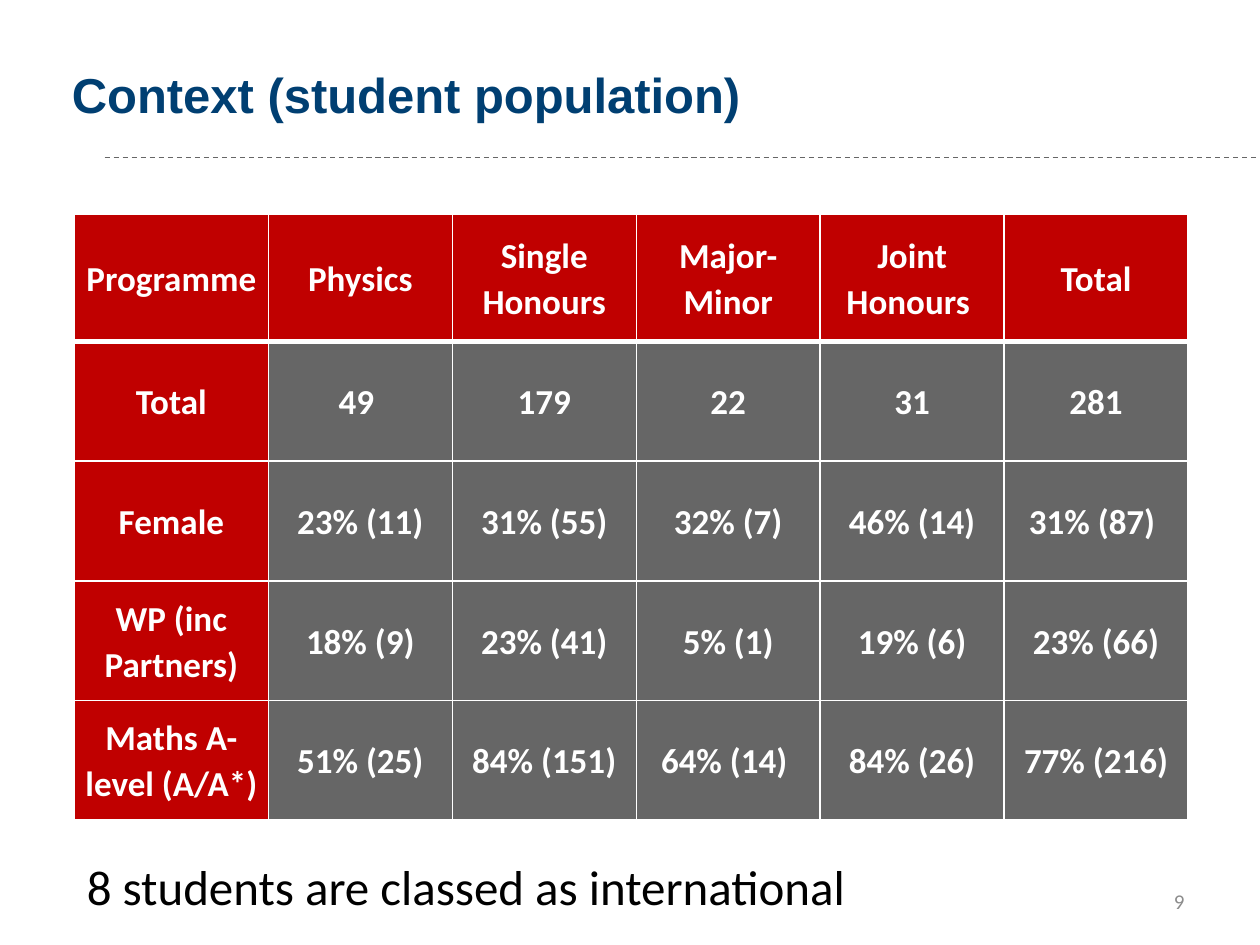
from lxml import etree
from pptx import Presentation, util as u
from pptx.dml.color import RGBColor
from pptx.enum import dml, shapes, text
from pptx.oxml.ns import qn

NAVY = RGBColor(0x00, 0x3F, 0x72)
RED = RGBColor(0xC0, 0x00, 0x00)
GREY = RGBColor(0x66, 0x66, 0x66)
PALE = RGBColor(0x8C, 0x8C, 0x8C)
WHITE = RGBColor(0xFF, 0xFF, 0xFF)
BLACK = RGBColor(0x00, 0x00, 0x00)

WIDTH, HEIGHT = u.Inches(10), u.Inches(7.5)
COLUMNS = [1.54] + [1.46] * 5
ROWS = [1.01] + [0.95] * 4
POPULATION = [
    ["Programme", "Physics", "Single Honours", "Major-Minor", "Joint Honours ", "Total"],
    ["Total", "49 ", "179", "22", "31", "281"],
    ["Female", "23% (11)", "31% (55)", "32% (7)", "46% (14)", "31% (87) "],
    ["WP (inc Partners)", "18% (9)", "23% (41)", "5% (1)", "19% (6)", "23% (66)"],
    ["Maths A-level (A/A*)", "51% (25)", "84% (151)", "64% (14) ", "84% (26)", "77% (216)"],
]


def style(p, size, color, name="Calibri", bold=False, align=text.PP_ALIGN.LEFT):
    p.alignment = align
    p.font.size = u.Pt(size)
    p.font.name = name
    p.font.bold = bold
    p.font.color.rgb = color


def add_title(s, words):
    sp = s.shapes.title
    sp.left, sp.top, sp.width, sp.height = map(u.Inches, (0.47, 0.44, 9.53, 0.61))
    tf = sp.text_frame
    tf.text = words
    tf.vertical_anchor = text.MSO_ANCHOR.MIDDLE
    style(tf.paragraphs[0], 28, NAVY, "Arial", True)


def add_rule(s):
    y = u.Inches(1.25)
    line = s.shapes.add_connector(shapes.MSO_CONNECTOR.STRAIGHT, u.Inches(0.83), y, WIDTH, y)
    line.line.color.rgb = GREY
    line.line.width = u.Pt(0.75)
    line.line.dash_style = dml.MSO_LINE.DASH
    etree.SubElement(line._element.spPr, qn("a:effectLst"))


def add_label(s, words, box, size, color, align=text.PP_ALIGN.LEFT,
              anchor=text.MSO_ANCHOR.TOP, wrap=True):
    tf = s.shapes.add_textbox(*map(u.Inches, box)).text_frame
    tf.word_wrap = wrap
    tf.vertical_anchor = anchor
    tf.text = words
    style(tf.paragraphs[0], size, color, align=align)


def add_borders(cell, widths):
    tc_pr = cell._tc.get_or_add_tcPr()
    for i, (side, width) in enumerate(widths.items()):
        ln = etree.Element(qn(f"a:ln{side}"), w=str(u.Pt(width)))
        fill = etree.SubElement(ln, qn("a:solidFill"))
        etree.SubElement(fill, qn("a:srgbClr"), val=str(WHITE))
        tc_pr.insert(i, ln)


def format_cell(cell, words, row, col):
    cell.text = words
    cell.vertical_anchor = text.MSO_ANCHOR.MIDDLE
    cell.margin_left = cell.margin_right = u.Inches(0.07)
    cell.margin_top = cell.margin_bottom = 0
    cell.fill.solid()
    cell.fill.fore_color.rgb = RED if row == 0 or col == 0 else GREY
    p = cell.text_frame.paragraphs[0]
    p.line_spacing = 1.07
    style(p, 20, WHITE, bold=True, align=text.PP_ALIGN.CENTER)
    add_borders(cell, {"L": 1, "R": 1, "T": 3 if row == 1 else 1, "B": 3 if row == 0 else 1})


def add_population_table(s):
    box = map(u.Inches, (0.59, 1.7, sum(COLUMNS), sum(ROWS)))
    table = s.shapes.add_table(len(ROWS), len(COLUMNS), *box).table
    for column, width in zip(table.columns, COLUMNS):
        column.width = u.Inches(width)
    for row, height in zip(table.rows, ROWS):
        row.height = u.Inches(height)
    for i, values in enumerate(POPULATION):
        for j, words in enumerate(values):
            format_cell(table.cell(i, j), words, i, j)


def main():
    prs = Presentation()
    prs.slide_width, prs.slide_height = WIDTH, HEIGHT
    s = prs.slides.add_slide(prs.slide_layouts[5])
    add_rule(s)
    add_label(s, "9", (7.17, 6.95, 2.33, 0.4), 12, PALE,
              text.PP_ALIGN.RIGHT, text.MSO_ANCHOR.MIDDLE)
    add_title(s, "Context (student population)")
    add_population_table(s)
    add_label(s, "8 students are classed as international",
              (0.59, 6.75, 6.29, 0.57), 28, BLACK, wrap=False)
    prs.save("out.pptx")


if __name__ == "__main__":
    main()
